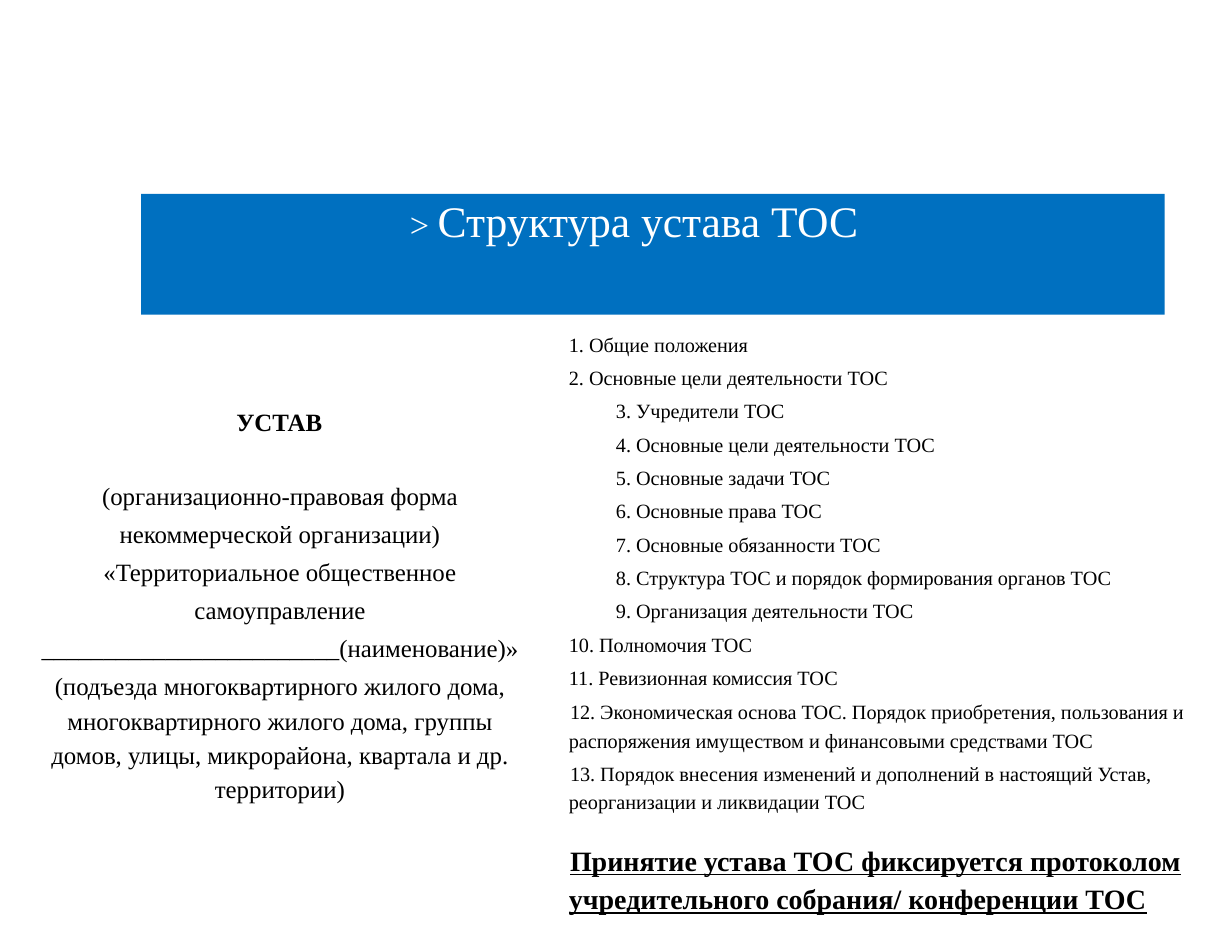
"""Build the slide on the structure of a TOS charter."""
from pptx import Presentation
from pptx.dml.color import RGBColor
from pptx.enum.text import MSO_ANCHOR, PP_ALIGN
from pptx.util import Inches, Pt

COLUMNS, ROWS = 1100, 850
deck = Presentation()
deck.slide_width, deck.slide_height = Inches(11), Inches(8.5)
slide = deck.slides.add_slide(deck.slide_layouts[6])
column, row = deck.slide_width // COLUMNS, deck.slide_height // ROWS


def add_panel(left, top, width, height, fill="FFFFFF", wrap=True):
    panel = slide.shapes.add_textbox(left * column, top * row, width * column, height * row)
    panel.fill.solid()
    panel.fill.fore_color.rgb = RGBColor.from_string(fill)
    frame = panel.text_frame
    layout = {"margin_left": 0, "margin_top": 0, "margin_right": 0, "margin_bottom": 0,
              "word_wrap": wrap, "vertical_anchor": MSO_ANCHOR.TOP}
    for name, value in layout.items():
        setattr(frame, name, value)
    return frame


def write(paragraph, text, size, color="000000", indent=0, margin=0, font=None, **spacing):
    run = paragraph.add_run()
    run.text = text
    run.font.color.rgb = RGBColor.from_string(color)
    for name, value in {"name": "Times New Roman", "size": Pt(size), **(font or {})}.items():
        setattr(run.font, name, value)
    for name, value in spacing.items():
        setattr(paragraph, name, value)
    properties = paragraph._p.get_or_add_pPr()
    properties.set("marL", str(margin * column))
    properties.set("indent", str(indent * column))


heading = add_panel(126, 173, 914, 108, "0070C0").paragraphs[0]
for text, size in (("> ", 22), ("Структура устава ТОС", 28)):
    write(heading, text, size, "FFFFFF", margin=240)

charter = add_panel(211, 363, 110, 39, wrap=False).paragraphs[0]
write(charter, "УСТАВ", 16, font={"bold": True})

name_form = add_panel(28, 422, 444, 331)
write(name_form.paragraphs[0],
      "(организационно-правовая форма некоммерческой организации) "
      "«Территориальное общественное самоуправление "
      "________________________(наименование)»",
      16, alignment=PP_ALIGN.CENTER, line_spacing=1.27, space_after=Pt(2.8))
write(name_form.add_paragraph(),
      "(подъезда многоквартирного жилого дома, многоквартирного жилого дома, "
      "группы домов, улицы, микрорайона, квартала и др. территории)",
      16, alignment=PP_ALIGN.CENTER, line_spacing=1.15)

sections = [
    "Общие положения",
    "Основные цели деятельности ТОС",
    "Учредители ТОС",
    "Основные цели деятельности ТОС",
    "Основные задачи ТОС",
    "Основные права ТОС",
    "Основные обязанности ТОС",
    "Структура ТОС и порядок формирования органов ТОС",
    "Организация деятельности ТОС",
    "Полномочия ТОС",
    "Ревизионная комиссия ТОС",
    "Экономическая основа ТОС. Порядок приобретения, пользования и "
    "распоряжения имуществом и финансовыми средствами ТОС",
    "Порядок внесения изменений и дополнений в настоящий Устав, "
    "реорганизации и ликвидации ТОС",
]
contents = add_panel(508, 293, 567, 539)
for number, section in enumerate(sections, 1):
    paragraph = contents.paragraphs[0] if number == 1 else contents.add_paragraph()
    write(paragraph, f"{number}. {section}", 13,
          indent=42 if 3 <= number <= 9 else 1 if number >= 12 else 0,
          line_spacing=1.18 if number == 12 else 1.15,
          space_after=Pt(0 if number == len(sections) else 3.5))
write(contents.add_paragraph(),
      "Принятие устава ТОС фиксируется протоколом учредительного собрания/ конференции ТОС",
      18, indent=1, font={"bold": True, "underline": True},
      line_spacing=1.15, space_before=Pt(16))

deck.save("out.pptx")
